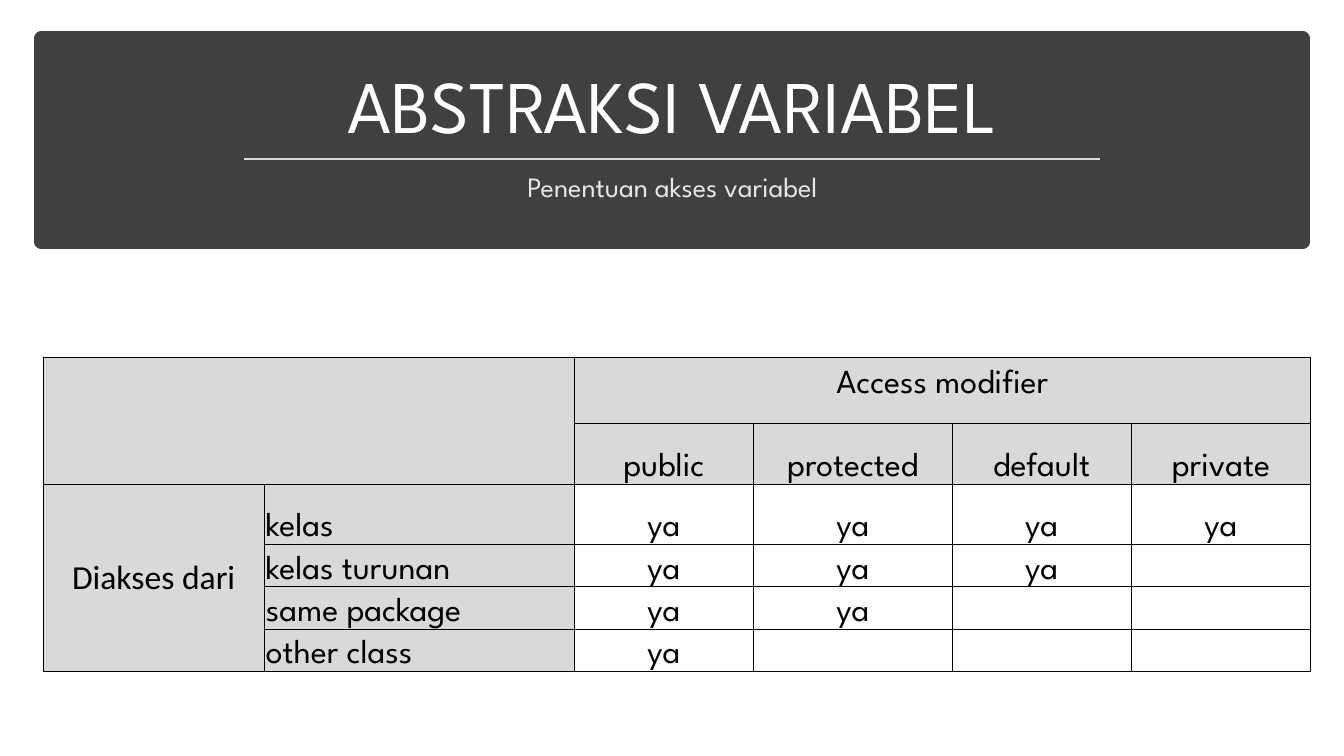
from dataclasses import dataclass

from lxml.etree import SubElement
from pptx import Presentation
from pptx.dml.color import RGBColor
from pptx.enum.shapes import MSO_CONNECTOR, MSO_SHAPE
from pptx.enum.text import MSO_ANCHOR, MSO_AUTO_SIZE, PP_ALIGN
from pptx.oxml.ns import qn
from pptx.util import Inches, Pt


@dataclass(frozen=True)
class Theme:
    """Colours, fonts and type sizes of the slide."""
    band: str = "404040"
    white: str = "FFFFFF"
    subtitle: str = "E7E6E6"
    grey: str = "D9D9D9"
    black: str = "000000"
    font: str = "League Spartan"
    side_font: str = "Calibri"
    title_pt: int = 53
    subtitle_pt: int = 20
    table_pt: int = 24
    border_pt: float = 0.5


THEME = Theme()
MODIFIERS = ["public", "protected", "default", "private"]
ACCESS = [("kelas", 4), ("kelas turunan", 3), ("same package", 2), ("other class", 1)]
COL_WIDTHS = [2.19, 3.08, 1.78, 1.97, 1.78, 1.78]
ROW_HEIGHTS = [0.57, 0.6, 0.6, 0.33, 0.33, 0.33]
TIGHT = (0.02, 0.02, 0.02, 0)
ROOMY = (0.27, 0.13, 0.27, 0.13)


def rgb(color):
    """Turn a hex string into a colour."""
    return RGBColor.from_string(color)


def write(tf, text, size, color, align=PP_ALIGN.CENTER, font=THEME.font):
    """Put one formatted run in the first paragraph and return the paragraph."""
    p = tf.paragraphs[0]
    p.alignment = align
    r = p.add_run()
    r.text = text
    r.font.size = Pt(size)
    r.font.name = font
    r.font.color.rgb = rgb(color)
    return p


def add_header(s, x, y, w, h):
    """Draw the dark band with its title, rule and subtitle."""
    band = s.shapes.add_shape(MSO_SHAPE.RECTANGLE, Inches(x), Inches(y), Inches(w), Inches(h))
    band.shadow.inherit = False
    band.fill.solid()
    band.fill.fore_color.rgb = rgb(THEME.band)
    band.line.color.rgb = rgb(THEME.band)
    band.line.width = Pt(10)

    title = s.shapes.title
    title.element.addprevious(band.element)
    title.left, title.top = Inches(x + 0.17), Inches(y + 0.13)
    title.width, title.height = Inches(w - 0.33), Inches(1.02)
    tf = title.text_frame
    tf.auto_size = MSO_AUTO_SIZE.NONE
    tf.vertical_anchor = MSO_ANCHOR.BOTTOM
    write(tf, "ABSTRAKSI VARIABEL", THEME.title_pt, THEME.white).line_spacing = 0.9

    sub = s.shapes.add_textbox(Inches(x + 1.26), Inches(y + 1.29), Inches(w - 2.51), Inches(0.46))
    sub.text_frame.word_wrap = True
    p = write(sub.text_frame, "Penentuan akses variabel", THEME.subtitle_pt, THEME.subtitle)
    p.line_spacing = 0.9
    p.space_before = Pt(10)

    rule = s.shapes.add_connector(MSO_CONNECTOR.STRAIGHT, Inches(x + 2.01), Inches(y + 1.2),
                                  Inches(x + w - 2.01), Inches(y + 1.2))
    rule.line.color.rgb = rgb(THEME.grey)
    rule.line.width = Pt(1.75)
    SubElement(rule.element.spPr, qn("a:effectLst"))


def style_cell(cell, fill):
    """Give a cell its margins, borders, fill and empty-line size."""
    set_margins(cell, TIGHT)
    cell.vertical_anchor = MSO_ANCHOR.BOTTOM
    tc_pr = cell._tc.get_or_add_tcPr()
    for side in ("lnL", "lnR", "lnT", "lnB"):
        ln = SubElement(tc_pr, qn(f"a:{side}"), w=str(Pt(THEME.border_pt)))
        SubElement(SubElement(ln, qn("a:solidFill")), qn("a:srgbClr"), val=THEME.black)
    cell.fill.solid()
    cell.fill.fore_color.rgb = rgb(fill)


def set_margins(cell, margins):
    """Set left, top, right and bottom cell margins in inches."""
    (cell.margin_left, cell.margin_top,
     cell.margin_right, cell.margin_bottom) = map(Inches, margins)


def fill_cell(cell, text, **style):
    """Write table text into a cell."""
    write(cell.text_frame, text, THEME.table_pt, THEME.black, **style)


def add_access_table(s, x, y, w, h):
    """Draw the matrix of access modifiers."""
    rows, cols = len(ROW_HEIGHTS), len(COL_WIDTHS)
    table = s.shapes.add_table(rows, cols, Inches(x), Inches(y), Inches(w), Inches(h)).table
    table.first_row = table.horz_banding = False
    for col, width in zip(table.columns, COL_WIDTHS):
        col.width = Inches(width * w / sum(COL_WIDTHS))
    for row, height in zip(table.rows, ROW_HEIGHTS):
        row.height = Inches(height * h / sum(ROW_HEIGHTS))
    for r in range(rows):
        for c in range(cols):
            style_cell(table.cell(r, c), THEME.grey if r < 2 or c < 2 else THEME.white)

    table.cell(0, 0).merge(table.cell(1, 1))
    top, side = table.cell(0, 2), table.cell(2, 0)
    top.merge(table.cell(0, cols - 1))
    side.merge(table.cell(rows - 1, 0))
    for cell in (top, side):
        set_margins(cell, ROOMY)
    top.vertical_anchor = MSO_ANCHOR.TOP
    side.vertical_anchor = MSO_ANCHOR.MIDDLE
    fill_cell(top, "Access modifier")
    fill_cell(side, "Diakses dari", font=THEME.side_font)

    for c, modifier in enumerate(MODIFIERS, 2):
        fill_cell(table.cell(1, c), modifier)
    for r, (place, allowed) in enumerate(ACCESS, 2):
        fill_cell(table.cell(r, 1), place, align=PP_ALIGN.LEFT)
        for c in range(2, 2 + allowed):
            fill_cell(table.cell(r, c), "ya")
        for c in range(2 + allowed, cols):
            p = table.cell(r, c).text_frame.paragraphs[0]
            SubElement(p._p, qn("a:endParaRPr"), sz="1200")


def main():
    """Build and save the slide."""
    prs = Presentation()
    prs.slide_width, prs.slide_height = Inches(13.33), Inches(7.5)
    s = prs.slides.add_slide(prs.slide_layouts[5])
    add_header(s, 0.41, 0.38, 12.51, 2.02)
    add_access_table(s, 0.43, 3.54, 12.57, 2.76)
    prs.save("out.pptx")


if __name__ == "__main__":
    main()
